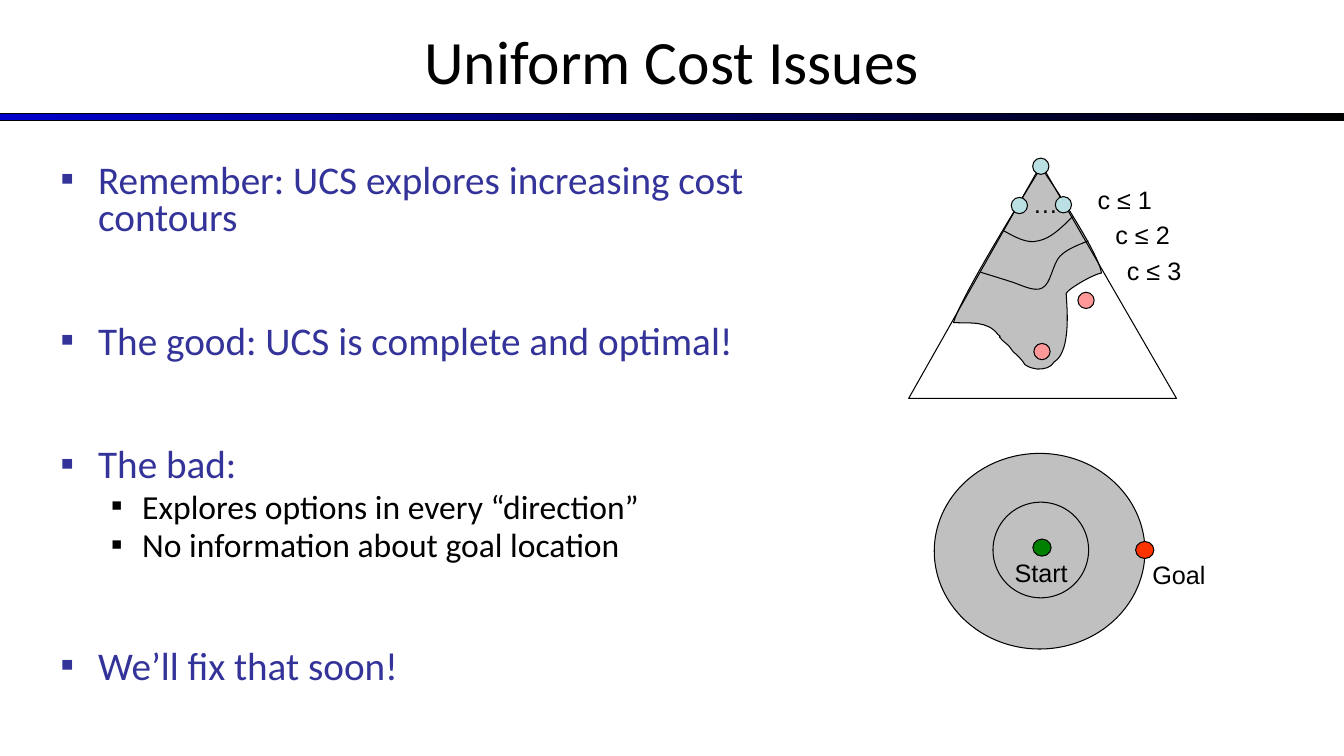
from dataclasses import dataclass

from lxml import etree
from pptx import Presentation
from pptx import util as u
from pptx.dml.color import RGBColor
from pptx.enum import shapes, text
from pptx.oxml import ns


@dataclass(frozen=True)
class Theme:
    heading_font: str = "Calibri"
    label_font: str = "Arial"
    title_size: int = 44
    item_size: int = 28
    subitem_size: int = 24
    label_size: int = 18
    line_width: float = 0.75
    ink: str = "000000"
    item: str = "333399"
    bar_start: str = "0000CC"
    explored: str = "C0C0C0"
    node: str = "BBE0E3"
    goal_node: str = "FF9999"
    start: str = "008000"
    goal: str = "FF3300"


class SlideBuilder:
    def __init__(self, slide, theme):
        self.slide = slide
        self.theme = theme

    def add_run(self, p, words, font, size, color):
        r = p.add_run()
        r.text = words
        r.font.name = font
        r.font.size = u.Pt(size)
        r.font.color.rgb = RGBColor.from_string(color)

    def place(self, sp, left, top, width, height):
        sp.left, sp.top = u.Cm(left), u.Cm(top)
        sp.width, sp.height = u.Cm(width), u.Cm(height)

    def style(self, sp, fill=None):
        sp.shadow.inherit = False
        if fill:
            sp.fill.solid()
            sp.fill.fore_color.rgb = RGBColor.from_string(fill)
        else:
            sp.fill.background()
        sp.line.color.rgb = RGBColor.from_string(self.theme.ink)
        sp.line.width = u.Pt(self.theme.line_width)

    def title(self, words, *box):
        sp = self.slide.shapes.title
        self.place(sp, *box)
        tf = sp.text_frame
        tf.vertical_anchor = text.MSO_ANCHOR.MIDDLE
        p = tf.paragraphs[0]
        p.alignment = text.PP_ALIGN.CENTER
        self.add_run(p, words, self.theme.heading_font, self.theme.title_size, self.theme.ink)

    def bullets(self, items, *box):
        """Fill the body with (level, words) items; top-level items stand well apart."""
        t = self.theme
        looks = [(t.item_size, t.item, 0.95, -0.95, 61.3),
                 (t.subitem_size, t.ink, 2.06, -0.79, 4.8)]
        sp = self.slide.placeholders[1]
        self.place(sp, *box)
        tf = sp.text_frame
        tf.auto_size = text.MSO_AUTO_SIZE.NONE
        for i, (level, words) in enumerate(items):
            size, color, margin, indent, gap = looks[level]
            p = tf.add_paragraph() if i else tf.paragraphs[0]
            p.level = level
            p.line_spacing = 0.8
            p.space_before = u.Pt(gap if i else 0)
            self.bullet(p, color, margin, indent)
            self.add_run(p, words, t.heading_font, size, color)

    def bullet(self, p, color, margin, indent):
        props = p._p.get_or_add_pPr()
        props.set("marL", str(u.Cm(margin)))
        props.set("indent", str(u.Cm(indent)))
        clr = etree.SubElement(props, ns.qn("a:buClr"))
        etree.SubElement(clr, ns.qn("a:srgbClr"), val=color)
        etree.SubElement(props, ns.qn("a:buFont"), typeface=self.theme.label_font)
        etree.SubElement(props, ns.qn("a:buChar"), char="▪")

    def gradient_bar(self, *box):
        sp = self.slide.shapes.add_shape(shapes.MSO_SHAPE.RECTANGLE, *map(u.Cm, box))
        self.style(sp)
        sp.fill.gradient()
        sp.fill.gradient_angle = 0
        colors = (self.theme.bar_start, self.theme.ink)
        for stop, position, color in zip(sp.fill.gradient_stops, (0, 1), colors):
            stop.position = position
            stop.color.rgb = RGBColor.from_string(color)

    def ellipse(self, x, y, width, height, fill=None):
        """Draw an ellipse centred on (x, y)."""
        box = (x - width / 2, y - height / 2, width, height)
        sp = self.slide.shapes.add_shape(shapes.MSO_SHAPE.OVAL, *map(u.Cm, box))
        self.style(sp, fill)

    def outline(self, points, fill=None, close=False):
        pts = [(u.Cm(x), u.Cm(y)) for x, y in points]
        builder = self.slide.shapes.build_freeform(*pts[0])
        builder.add_line_segments(pts[1:], close=close)
        sp = builder.convert_to_shape()
        self.style(sp, fill)
        return sp

    def curve(self, points, fill=None, close=False):
        """Draw joined cubic curves: a start, then two controls and an end for each."""
        sp = self.outline(points, fill, close)
        segments = list(sp._element.iter(ns.qn("a:lnTo")))
        for i in range(0, len(segments), 3):
            bezier = etree.Element(ns.qn("a:cubicBezTo"))
            segments[i].addprevious(bezier)
            for segment in segments[i:i + 3]:
                bezier.append(segment[0])
                segment.getparent().remove(segment)

    def label(self, words, left, top, width):
        sp = self.slide.shapes.add_textbox(*map(u.Cm, (left, top, width, 1.02)))
        tf = sp.text_frame
        tf.word_wrap = True
        t = self.theme
        self.add_run(tf.paragraphs[0], words, t.label_font, t.label_size, t.ink)


EXPLORED_REGION = [
    (26.37, 4.42), (26.64, 4.8), (27.69, 6.4), (27.76, 6.88),
    (27.56, 6.91), (26.95, 7.26), (26.87, 7.39),
    (26.87, 7.57), (27.03, 8.84), (26.57, 9.12),
    (26.47, 9.27), (26.34, 9.3), (26.14, 9.3),
    (25.98, 9.27), (25.96, 9.27), (25.83, 9.19),
    (25.78, 9.09), (25.63, 8.94), (25.53, 8.86),
    (25.4, 8.69), (25.48, 8.76), (25.3, 8.61),
    (25.04, 8.36), (25.32, 8.56), (25.15, 8.43),
    (24.89, 8.08), (24.46, 8.15), (24.03, 8.13),
    (24.21, 7.49), (25.73, 5.05), (26.11, 4.42),
    (26.49, 3.81), (26.31, 4.42), (26.37, 4.42),
]
SEARCH_TREE = [(22.9, 10.04), (29.65, 10.04), (26.24, 4.14)]
CONTOUR_2 = [
    (27.43, 6.07), (27.18, 6.17), (26.9, 6.27), (26.72, 6.45),
    (26.52, 6.65), (26.49, 7.16), (26.26, 7.26),
    (26.06, 7.37), (25.7, 7.16), (25.45, 7.09),
    (25.2, 7.01), (24.94, 6.93), (24.71, 6.86),
]
CONTOUR_1 = [
    (27.03, 5.46), (26.75, 5.74), (26.47, 6.02), (26.16, 6.07),
    (25.88, 6.15), (25.58, 5.97), (25.3, 5.82),
]


def draw_tree(b):
    t = b.theme
    b.curve(EXPLORED_REGION, t.explored, close=True)
    b.outline(SEARCH_TREE, close=True)
    b.curve(CONTOUR_2)
    b.curve(CONTOUR_1)
    for x, y, fill in [(25.69, 5.18, t.node), (26.8, 5.16, t.node), (26.23, 4.19, t.node),
                       (27.37, 7.57, t.goal_node), (26.26, 8.86, t.goal_node)]:
        b.ellipse(x, y, 0.41, 0.41, fill)
    b.label("…", 25.78, 4.62, 0.64)
    for cost, (left, top) in enumerate([(27.41, 4.52), (27.86, 5.4), (28.15, 6.3)], 1):
        b.label(f"c ≤ {cost}", left, top, 1.91)


def draw_state_space(b):
    t = b.theme
    b.ellipse(26.2, 13.89, 5.31, 4.93, t.explored)
    b.ellipse(26.23, 13.86, 2.41, 2.41)
    b.ellipse(26.26, 13.8, 0.46, 0.43, t.start)
    b.label("Start", 25.32, 13.92, 2.54)
    b.ellipse(28.85, 13.86, 0.46, 0.43, t.goal)
    b.label("Goal", 28.79, 13.97, 2.54)


def main():
    prs = Presentation()
    prs.slide_width, prs.slide_height = u.Cm(33.87), u.Cm(19.05)
    b = SlideBuilder(prs.slides.add_slide(prs.slide_layouts[1]), Theme())
    b.gradient_bar(0, 2.87, 33.87, 0.18)
    b.title("Uniform Cost Issues", 0, -0.08, 33.87, 3.18)
    b.bullets([
        (0, "Remember: UCS explores increasing cost contours"),
        (0, "The good: UCS is complete and optimal!"),
        (0, "The bad:"),
        (1, "Explores options in every “direction”"),
        (1, "No information about goal location"),
        (0, "We’ll fix that soon!"),
    ], 1.27, 4.01, 17.98, 12.57)
    draw_tree(b)
    draw_state_space(b)
    prs.save("out.pptx")


if __name__ == "__main__":
    main()
